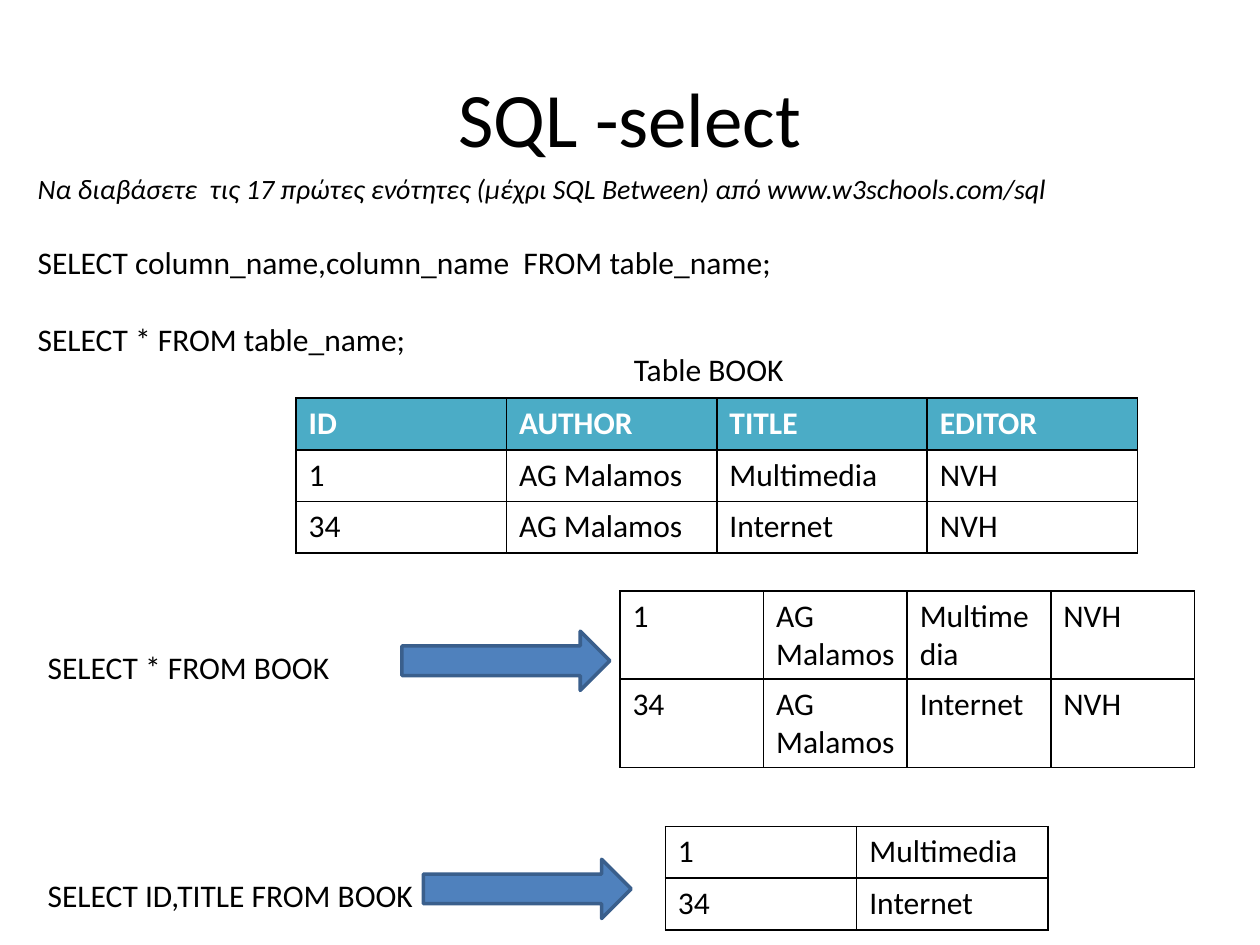
from dataclasses import dataclass

from lxml.etree import SubElement
from pptx import Presentation
from pptx.dml.color import RGBColor
from pptx.enum.shapes import MSO_SHAPE as Shape
from pptx.enum.text import MSO_ANCHOR as Anchor, PP_ALIGN as Align
from pptx.oxml import parse_xml
from pptx.oxml.ns import nsdecls, qn
from pptx.util import Inches, Pt


@dataclass(frozen=True)
class Theme:
    font: str = "Calibri"
    ink: str = "000000"
    paper: str = "FFFFFF"
    header: str = "4BACC6"
    arrow: str = "4F81BD"
    arrow_edge: str = "3A5F8C"
    title_size: int = 44
    body_size: int = 18
    note_size: int = 16
    line_gap: int = 22


@dataclass(frozen=True)
class Line:
    text: str
    size: int
    italic: bool = False
    gap: int = 0


@dataclass(frozen=True)
class TextBlock:
    lines: tuple
    left: float
    top: float
    width: float
    height: float
    align: Align = Align.LEFT
    wrap: bool = True


@dataclass(frozen=True)
class Grid:
    rows: tuple
    left: float
    top: float
    column_width: float
    row_height: float
    has_header: bool = False


@dataclass(frozen=True)
class Query:
    text: str
    text_width: float
    arrow_left: float
    arrow_top: float
    result: Grid


THEME = Theme()
HEADINGS = ("ID", "AUTHOR", "TITLE", "EDITOR")
BOOKS = (
    ("1", "AG Malamos", "Multimedia", "NVH"),
    ("34", "AG Malamos", "Internet", "NVH"),
)
SYNTAX = TextBlock(
    (
        Line(
            "Να διαβάσετε  τις 17 πρώτες ενότητες (μέχρι SQL Between) από www.w3schools.com/sql",
            THEME.note_size,
            italic=True,
        ),
        Line("SELECT column_name,column_name  FROM table_name;", THEME.body_size, gap=THEME.line_gap),
        Line("SELECT * FROM table_name;", THEME.body_size, gap=THEME.line_gap),
    ),
    0.2, 1.31, 9.72, 1.62,
)
CAPTION = TextBlock((Line("Table BOOK", THEME.body_size),), 2.32, 2.73, 6.61, 0.4, Align.CENTER)
BOOK_TABLE = Grid((HEADINGS,) + BOOKS, 2.35, 3.16, 1.67, 0.41, has_header=True)
QUERIES = (
    Query("SELECT * FROM BOOK", 2.57, 3.19, 5.01, Grid(BOOKS, 4.92, 4.69, 1.14, 0.7)),
    Query(
        "SELECT ID,TITLE FROM BOOK", 3.13, 3.36, 6.82,
        Grid(tuple((book[0], book[2]) for book in BOOKS), 5.28, 6.56, 1.52, 0.41),
    ),
)


def style_font(font, size: int, color: str = THEME.ink, bold: bool = False, italic: bool = False) -> None:
    font.name = THEME.font
    font.size = Pt(size)
    font.bold = bold
    font.italic = italic
    font.color.rgb = RGBColor.from_string(color)


def set_title(page, text: str) -> None:
    title = page.shapes.title
    title.left, title.top = Inches(0.5), Inches(0.3)
    title.width, title.height = Inches(9), Inches(1.25)
    title.text_frame.text = text
    title.text_frame.vertical_anchor = Anchor.MIDDLE
    para = title.text_frame.paragraphs[0]
    para.alignment = Align.CENTER
    style_font(para.font, THEME.title_size)


def add_text(page, block: TextBlock) -> None:
    box = page.shapes.add_textbox(
        Inches(block.left), Inches(block.top), Inches(block.width), Inches(block.height)
    )
    frame = box.text_frame
    frame.word_wrap = block.wrap
    for index, line in enumerate(block.lines):
        para = frame.add_paragraph() if index else frame.paragraphs[0]
        para.text = line.text
        para.alignment = block.align
        if line.gap:
            para.space_before = Pt(line.gap)
        style_font(para.font, line.size, italic=line.italic)


def set_borders(cell) -> None:
    properties = cell._tc.get_or_add_tcPr()
    for index, side in enumerate(("lnL", "lnR", "lnT", "lnB")):
        border = parse_xml(f'<a:{side} {nsdecls("a")} w="{Pt(1)}"/>')
        fill = SubElement(border, qn("a:solidFill"))
        SubElement(fill, qn("a:srgbClr"), val=THEME.ink)
        properties.insert(index, border)


def add_grid(page, grid: Grid) -> None:
    row_count, column_count = len(grid.rows), len(grid.rows[0])
    table = page.shapes.add_table(
        row_count, column_count, Inches(grid.left), Inches(grid.top),
        Inches(grid.column_width * column_count), Inches(grid.row_height * row_count),
    ).table
    table.first_row = grid.has_header
    table.horz_banding = False
    for row_index, values in enumerate(grid.rows):
        is_header = grid.has_header and row_index == 0
        for column_index, value in enumerate(values):
            cell = table.cell(row_index, column_index)
            cell.text = value
            if is_header:
                cell.fill.solid()
                cell.fill.fore_color.rgb = RGBColor.from_string(THEME.header)
            else:
                cell.fill.background()
            set_borders(cell)
            color = THEME.paper if is_header else THEME.ink
            style_font(cell.text_frame.paragraphs[0].font, THEME.body_size, color, bold=is_header)


def add_arrow(page, left: float, top: float) -> None:
    arrow = page.shapes.add_shape(
        Shape.RIGHT_ARROW, Inches(left), Inches(top), Inches(1.65), Inches(0.47)
    )
    arrow.shadow.inherit = False
    arrow.fill.solid()
    arrow.fill.fore_color.rgb = RGBColor.from_string(THEME.arrow)
    arrow.line.color.rgb = RGBColor.from_string(THEME.arrow_edge)
    arrow.line.width = Pt(2)


def add_query(page, query: Query) -> None:
    line = Line(query.text, THEME.body_size)
    add_text(
        page,
        TextBlock((line,), 0.28, query.arrow_top + 0.08, query.text_width, 0.4, wrap=False),
    )
    add_arrow(page, query.arrow_left, query.arrow_top)
    add_grid(page, query.result)


def main() -> None:
    deck = Presentation()
    deck.slide_width, deck.slide_height = Inches(10), Inches(7.5)
    page = deck.slides.add_slide(deck.slide_layouts.get_by_name("Title Only"))
    set_title(page, "SQL -select")
    add_text(page, SYNTAX)
    add_grid(page, BOOK_TABLE)
    add_text(page, CAPTION)
    for query in QUERIES:
        add_query(page, query)
    deck.save("out.pptx")


if __name__ == "__main__":
    main()
